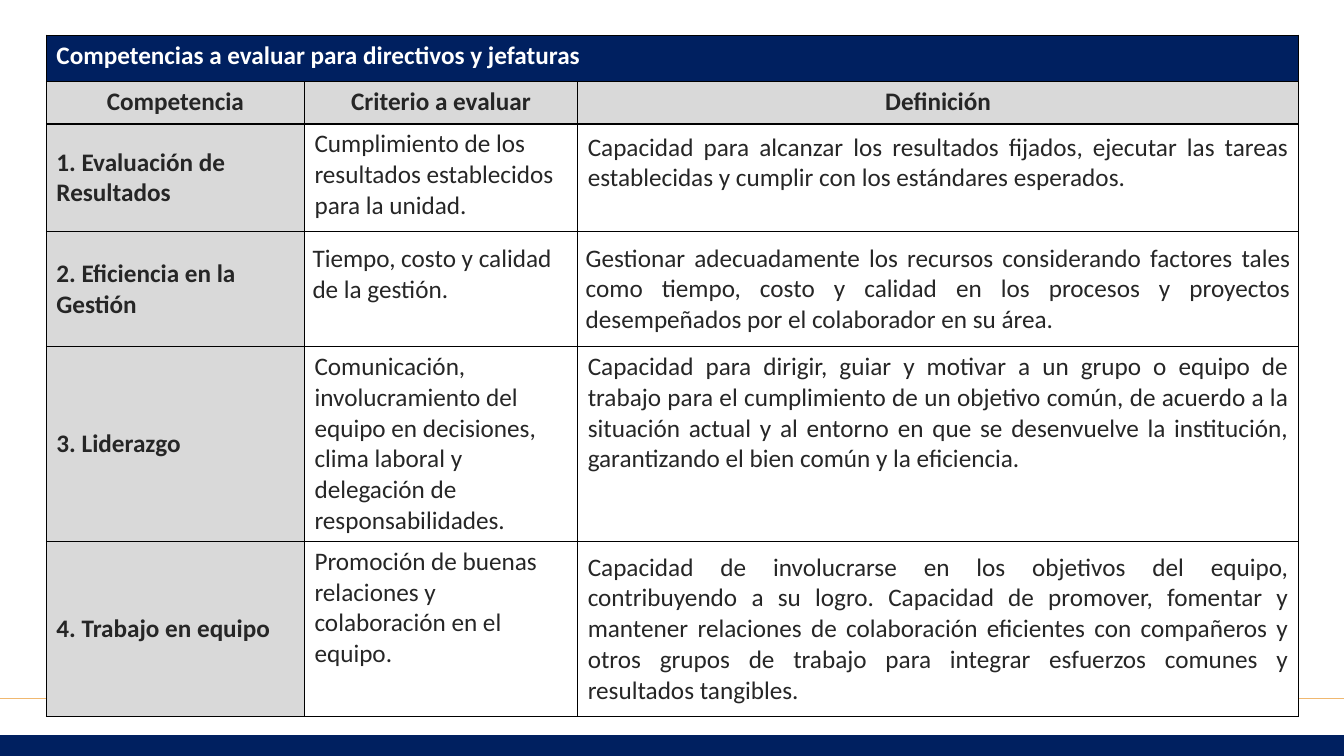
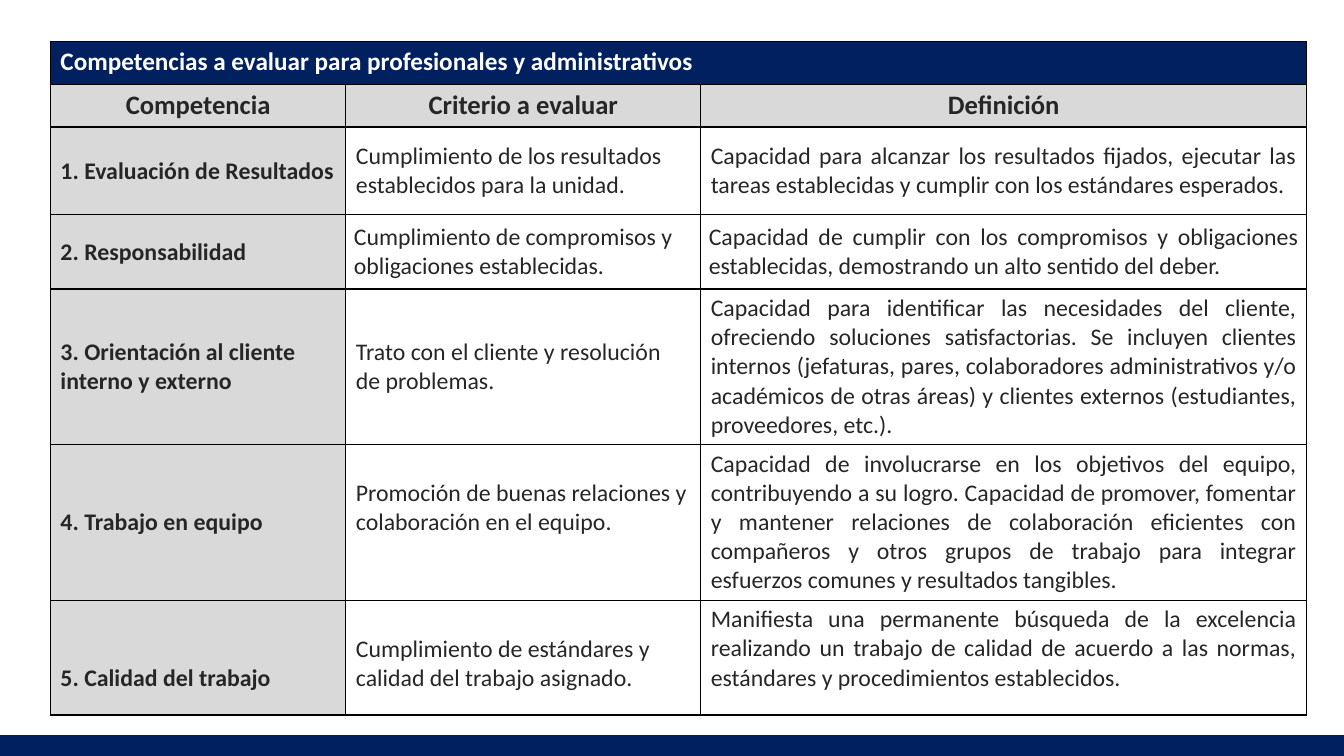
from dataclasses import dataclass

from lxml.etree import SubElement
from pptx import Presentation
from pptx.dml.color import RGBColor
from pptx.enum.shapes import MSO_CONNECTOR, MSO_SHAPE
from pptx.enum.text import MSO_ANCHOR, PP_ALIGN
from pptx.oxml import parse_xml
from pptx.oxml.ns import nsdecls, qn
from pptx.util import Inches, Pt


@dataclass(frozen=True)
class Theme:
    font: str = "Calibri"
    navy: str = "002060"
    grey: str = "D9D9D9"
    white: str = "FFFFFF"
    ink: str = "262626"
    border: str = "000000"
    rule: str = "F0B870"
    title_size: int = 18
    border_width: int = 1


@dataclass(frozen=True)
class Entry:
    """Text of one cell; above and below are extra room in inches."""
    text: str
    top: bool = False
    above: float = 0
    below: float = 0
    inset: tuple = (0.1, 0.05)


class Deck:
    HEADINGS = ("Competencia", "Criterio a evaluar", "Definición")
    ALIGNMENTS = (PP_ALIGN.LEFT, PP_ALIGN.LEFT, PP_ALIGN.JUSTIFY)

    def __init__(self, theme):
        self.theme = theme
        self.prs = Presentation()
        self.prs.slide_width, self.prs.slide_height = Inches(13.33), Inches(7.5)
        self.slide = None

    def new_slide(self):
        self.slide = self.prs.slides.add_slide(self.prs.slide_layouts[6])

    def rule(self, y):
        line = self.slide.shapes.add_connector(
            MSO_CONNECTOR.STRAIGHT, 0, Inches(y), self.prs.slide_width, Inches(y))
        line.line.color.rgb = RGBColor.from_string(self.theme.rule)
        line.line.width = Pt(0.75)
        SubElement(line._element.spPr, qn("a:effectLst"))

    def footer_band(self):
        band = self.slide.shapes.add_shape(
            MSO_SHAPE.RECTANGLE, 0, Inches(7.3), self.prs.slide_width, Inches(0.2))
        band.shadow.inherit = False
        navy = RGBColor.from_string(self.theme.navy)
        band.fill.solid()
        band.fill.fore_color.rgb = navy
        band.line.color.rgb = navy
        band.line.width = Pt(1.25)

    def borders(self, cell):
        properties = cell._tc.get_or_add_tcPr()
        for index, side in enumerate("LRTB"):
            properties.insert(index, parse_xml(
                f'<a:ln{side} {nsdecls("a")} w="{Pt(self.theme.border_width)}">'
                f'<a:solidFill><a:srgbClr val="{self.theme.border}"/></a:solidFill>'
                f'</a:ln{side}>'))

    def cell(self, cell, entry, size, fill, align, color=None, bold=False):
        side, edge = entry.inset
        cell.margin_left = cell.margin_right = Inches(side)
        cell.margin_top = Inches(edge + entry.above)
        cell.margin_bottom = Inches(edge + entry.below)
        cell.vertical_anchor = MSO_ANCHOR.TOP if entry.top else MSO_ANCHOR.MIDDLE
        cell.fill.solid()
        cell.fill.fore_color.rgb = RGBColor.from_string(fill)
        cell.text = entry.text
        paragraph = cell.text_frame.paragraphs[0]
        paragraph.alignment = align
        font = paragraph.font
        font.name, font.size, font.bold = self.theme.font, Pt(size), bold
        font.color.rgb = RGBColor.from_string(color or self.theme.ink)

    def competency_table(self, title, at, widths, heights, heading_size, body_size, rows):
        theme = self.theme
        frame = self.slide.shapes.add_table(
            len(heights), len(widths), Inches(at[0]), Inches(at[1]),
            Inches(sum(widths)), Inches(sum(heights)))
        table = frame.table
        table.first_row = table.horz_banding = False
        for column, width in zip(table.columns, widths):
            column.width = Inches(width)
        for row, height in zip(table.rows, heights):
            row.height = Inches(height)

        # Title and column headings
        table.cell(0, 0).merge(table.cell(0, len(widths) - 1))
        self.cell(table.cell(0, 0), Entry(title, top=True), theme.title_size,
                  theme.navy, PP_ALIGN.LEFT, theme.white, True)
        for c, heading in enumerate(self.HEADINGS):
            self.cell(table.cell(1, c), Entry(heading, top=True), heading_size,
                      theme.grey, PP_ALIGN.CENTER, bold=True)

        # Competencies: the name is bold on grey
        for r, entries in enumerate(rows, start=2):
            for c, entry in enumerate(entries):
                self.cell(table.cell(r, c), entry, body_size,
                          theme.white if c else theme.grey, self.ALIGNMENTS[c], bold=c == 0)
        for cell in table.iter_cells():
            self.borders(cell)


EVEN = (0.08, 0.08)
RESULTS = "1. Evaluación de Resultados"
RESULTS_CRITERION = "Cumplimiento de los resultados establecidos para la unidad."
RESULTS_DEFINITION = (
    "Capacidad para alcanzar los resultados fijados, ejecutar las tareas "
    "establecidas y cumplir con los estándares esperados.")
TEAMWORK = "4. Trabajo en equipo"
TEAMWORK_CRITERION = "Promoción de buenas relaciones y colaboración en el equipo."
TEAMWORK_DEFINITION = (
    "Capacidad de involucrarse en los objetivos del equipo, contribuyendo a su logro. "
    "Capacidad de promover, fomentar y mantener relaciones de colaboración eficientes "
    "con compañeros y otros grupos de trabajo para integrar esfuerzos comunes y "
    "resultados tangibles.")

MANAGERS = [
    (Entry(RESULTS), Entry(RESULTS_CRITERION, top=True),
     Entry(RESULTS_DEFINITION, below=0.3)),
    (Entry("2. Eficiencia en la Gestión"),
     Entry("Tiempo, costo y calidad de la gestión.", below=0.3, inset=EVEN),
     Entry("Gestionar adecuadamente los recursos considerando factores tales como tiempo, "
           "costo y calidad en los procesos y proyectos desempeñados por el colaborador "
           "en su área.", inset=EVEN)),
    (Entry("3. Liderazgo"),
     Entry("Comunicación, involucramiento del equipo en decisiones, clima laboral y "
           "delegación de responsabilidades.", top=True),
     Entry("Capacidad para dirigir, guiar y motivar a un grupo o equipo de trabajo para el "
           "cumplimiento de un objetivo común, de acuerdo a la situación actual y al "
           "entorno en que se desenvuelve la institución, garantizando el bien común y "
           "la eficiencia.", top=True)),
    (Entry(TEAMWORK), Entry(TEAMWORK_CRITERION, top=True), Entry(TEAMWORK_DEFINITION)),
]

STAFF = [
    (Entry(RESULTS), Entry(RESULTS_CRITERION), Entry(RESULTS_DEFINITION)),
    (Entry("2. Responsabilidad"),
     Entry("Cumplimiento de compromisos y obligaciones establecidas.", inset=EVEN),
     Entry("Capacidad de cumplir con los compromisos y obligaciones establecidas, "
           "demostrando un alto sentido del deber.", inset=EVEN)),
    (Entry("3. Orientación al cliente interno y externo"),
     Entry("Trato con el cliente y resolución de problemas."),
     Entry("Capacidad para identificar las necesidades del cliente, ofreciendo soluciones "
           "satisfactorias. Se incluyen clientes internos (jefaturas, pares, colaboradores "
           "administrativos y/o académicos de otras áreas) y clientes externos "
           "(estudiantes, proveedores, etc.).")),
    (Entry(TEAMWORK), Entry(TEAMWORK_CRITERION, top=True, above=0.29),
     Entry(TEAMWORK_DEFINITION)),
    (Entry("5. Calidad del trabajo", top=True, above=0.58),
     Entry("Cumplimiento de estándares y calidad del trabajo asignado.",
           top=True, above=0.29),
     Entry("Manifiesta una permanente búsqueda de la excelencia realizando un trabajo de "
           "calidad de acuerdo a las normas, estándares y procedimientos establecidos.",
           top=True)),
]


def main():
    deck = Deck(Theme())

    # Managers
    deck.new_slide()
    deck.rule(6.93)
    deck.competency_table(
        "Competencias a evaluar para directivos y jefaturas", (0.46, 0.35),
        (2.56, 2.71, 7.15), (0.46, 0.42, 1.07, 1.14, 1.93, 1.74), 18, 18, MANAGERS)
    deck.footer_band()

    # Professional and administrative staff
    deck.new_slide()
    deck.competency_table(
        "Competencias a evaluar para profesionales y administrativos", (0.5, 0.41),
        (2.93, 3.52, 6.01), (0.43, 0.42, 0.87, 0.73, 1.52, 1.52, 1.14), 19, 17, STAFF)
    deck.footer_band()

    deck.prs.save("out.pptx")


if __name__ == "__main__":
    main()
